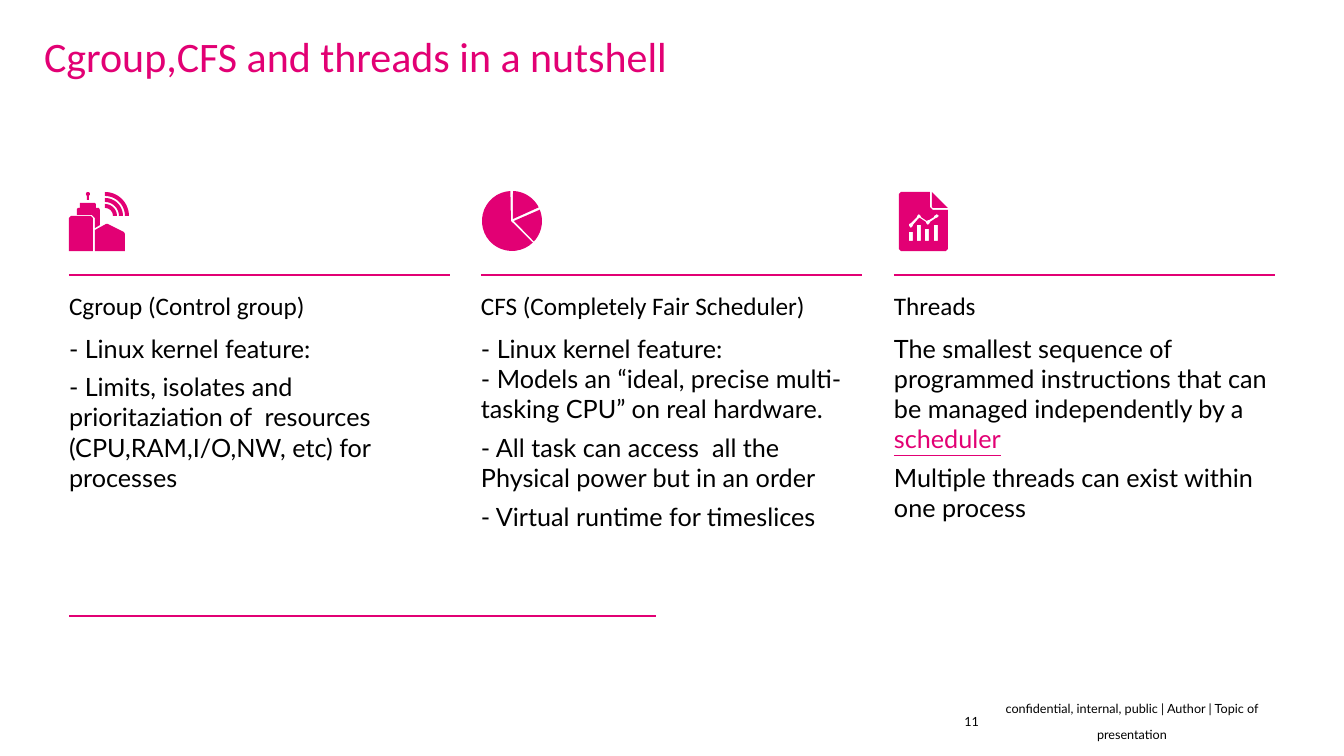
from math import cos, radians, sin

from lxml.etree import SubElement
from pptx import Presentation
from pptx.dml.color import RGBColor
from pptx.enum.shapes import MSO_CONNECTOR
from pptx.enum.text import MSO_ANCHOR, MSO_AUTO_SIZE, PP_ALIGN
from pptx.oxml.ns import qn
from pptx.util import Pt

COLORS = {"pink": "E20074", "black": "000000"}
HEAD, BODY = "Calibri", "Lato"
SCALE = 12192000 / 1344

COLUMNS = [
    ("Cgroup (Control group)", [
        [("- Linux kernel feature:", "black")],
        [("- Limits, isolates and prioritaziation of  resources "
          "(CPU,RAM,I/O,NW, etc) for processes", "black")],
    ]),
    ("CFS (Completely Fair Scheduler)", [
        [("- Linux kernel feature:\n- Models an “ideal, precise "
          "multi-tasking CPU” on real hardware.", "black")],
        [("- All task can access  all the Physical power but in an order",
          "black")],
        [("- Virtual runtime for timeslices", "black")],
    ]),
    ("Threads", [
        [("The smallest sequence of programmed instructions that can be "
          "managed independently by a ", "black"), ("scheduler", "pink")],
        [("Multiple threads can exist within one process", "black")],
    ]),
]


def px(n):
    return round(n * SCALE)


def arc(x, y, r, start, end):
    """Points on a circle, with angles in degrees clockwise from the right."""
    turns = [radians(start + (end - start) * i / 24) for i in range(25)]
    return [(x + r * cos(t), y + r * sin(t)) for t in turns]


def bar(x, y, w, h):
    return [(x, y), (x + w, y), (x + w, y + h), (x, y + h)]


def city():
    waves = [arc(105, 216, r, -90, 0) + arc(105, 216, r - 4, 0, -90)
             for r in (12, 18, 24)]
    house = [(95, 251), (95, 230), (106, 224), (108, 224), (124, 232),
             (125, 234), (125, 251)]
    block = [(69, 251), (69, 218), (71, 216), (91, 216), (93, 218), (93, 251)]
    tower = [(95, 228), (95, 218), (92, 215), (77, 215), (77, 209), (78, 208),
             (80, 208), (80, 203), (95, 203), (96, 204), (96, 208), (99, 208),
             (100, 210), (100, 225)]
    mast = arc(88, 194, 2, 120, 420) + [(89, 200), (87, 200)]
    return [house, block, tower, mast] + waves


def pie():
    slices = [((511, 221), 46, 267), ((513, 219), -88, -27),
              ((514, 221), -22, 43)]
    return [[tip] + arc(512, 221, 30, a, b) for tip, a, b in slices]


def report():
    fold = [(932, 192), (948, 208), (933, 208), (932, 207)]
    page = [(901, 192), (930, 192), (930, 207), (933, 210), (948, 210),
            (948, 249), (946, 251), (901, 251), (899, 249), (899, 194)]
    bars = [bar(909 + 25 * i // 3, top, 4, 241 - top)
            for i, top in enumerate((232, 225, 229, 225))]
    trend = [(937, 214), (939, 216), (937, 218), (936, 218), (930, 222),
             (930, 223), (928, 225), (926, 223), (926, 222), (920, 218),
             (919, 218), (913, 225), (913, 226), (911, 228), (909, 226),
             (909, 224), (911, 223), (917, 217), (917, 216), (919, 214),
             (921, 216), (921, 217), (927, 221), (928, 220), (929, 220),
             (934, 217), (934, 216)]
    return [fold, page, trend] + bars


class Deck:
    def __init__(self):
        self.prs = Presentation()
        self.prs.slide_width = px(1344)
        self.prs.slide_height = px(756)
        self.slide = self.prs.slides.add_slide(self.prs.slide_layouts[5])
        self.shapes = self.slide.shapes

    def color(self, name):
        return RGBColor.from_string(COLORS[name])

    def frame(self, shape, anchor=MSO_ANCHOR.TOP):
        """Text frame without margins."""
        tf = shape.text_frame
        tf.margin_left = tf.margin_right = 0
        tf.margin_top = tf.margin_bottom = 0
        tf.auto_size = MSO_AUTO_SIZE.NONE
        tf.word_wrap = True
        tf.vertical_anchor = anchor
        return tf

    def run(self, para, text, size, font, color):
        for i, line in enumerate(text.split("\n")):
            if i:
                para.add_line_break()
            run = para.add_run()
            run.text = line
            run.font.size = Pt(size)
            run.font.name = font
            run.font.color.rgb = self.color(color)
            if color == "pink" and font == BODY:
                run.font.underline = True

    def title(self, text, x, y, w, h):
        shape = self.shapes.title
        shape.left, shape.top = px(x), px(y)
        shape.width, shape.height = px(w), px(h)
        para = self.frame(shape).paragraphs[0]
        para.alignment = PP_ALIGN.LEFT
        para.line_spacing = 0.9
        self.run(para, text, 30, HEAD, "pink")

    def note(self, text, x, y, w, h, align):
        box = self.shapes.add_textbox(px(x), px(y), px(w), px(h))
        para = self.frame(box, MSO_ANCHOR.MIDDLE).paragraphs[0]
        para.alignment = align
        para.line_spacing = Pt(18)
        self.run(para, text, 9, BODY, "black")

    def column(self, head, paras, x, y, w, h):
        box = self.shapes.add_textbox(px(x), px(y), px(w), px(h))
        tf = self.frame(box)
        first = tf.paragraphs[0]
        first.space_after = Pt(9)
        self.run(first, head, 18, HEAD, "black")
        for runs in paras:
            para = tf.add_paragraph()
            para.space_after = Pt(6)
            for text, color in runs:
                self.run(para, text, 18, BODY, color)

    def rule(self, x, y, w):
        line = self.shapes.add_connector(
            MSO_CONNECTOR.STRAIGHT, px(x), px(y), px(x + w), px(y))
        line.line.color.rgb = self.color("pink")
        line.line.width = Pt(1)
        SubElement(line._element.spPr, qn("a:effectLst"))

    def icon(self, rings):
        """One filled shape; inner rings become holes."""
        rings = [[(px(x), px(y)) for x, y in ring] for ring in rings]
        form = self.shapes.build_freeform(*rings[0][0], scale=1.0)
        for i, ring in enumerate(rings):
            if i:
                form.move_to(*ring[0])
            form.add_line_segments(ring[1:], close=True)
        shape = form.convert_to_shape()
        shape.shadow.inherit = False
        shape.fill.solid()
        shape.fill.fore_color.rgb = self.color("pink")
        shape.line.fill.background()

    def table(self, x, y, w, h):
        """Single empty cell with a top border only."""
        grid = self.shapes.add_table(1, 1, px(x), px(y), px(w), px(h)).table
        grid.first_row = grid.horz_banding = False
        cell = grid.cell(0, 0)
        props = cell._tc.get_or_add_tcPr()
        for side in ("lnL", "lnR", "lnT", "lnB"):
            edge = SubElement(props, qn(f"a:{side}"), w=str(Pt(1)))
            if side == "lnT":
                fill = SubElement(edge, qn("a:solidFill"))
                SubElement(fill, qn("a:srgbClr"), val=COLORS["pink"])
            else:
                SubElement(edge, qn("a:noFill"))
        cell.fill.background()


def main():
    deck = Deck()
    deck.title("Cgroup,CFS and threads in a nutshell", 44, 36, 1249, 45)
    deck.note("confidential, internal, public | Author | Topic of presentation",
              1000, 709, 264, 15, PP_ALIGN.CENTER)
    deck.note("11", 376, 709, 603, 15, PP_ALIGN.RIGHT)
    deck.table(69, 616, 587, 72)
    for i, ((head, paras), draw) in enumerate(
            zip(COLUMNS, (city, pie, report))):
        x = 69 + 825 * i // 2
        deck.column(head, paras, x, 290, 381, 262)
        deck.icon(draw())
        deck.rule(x, 275, 381)
    deck.prs.save("out.pptx")


if __name__ == "__main__":
    main()
